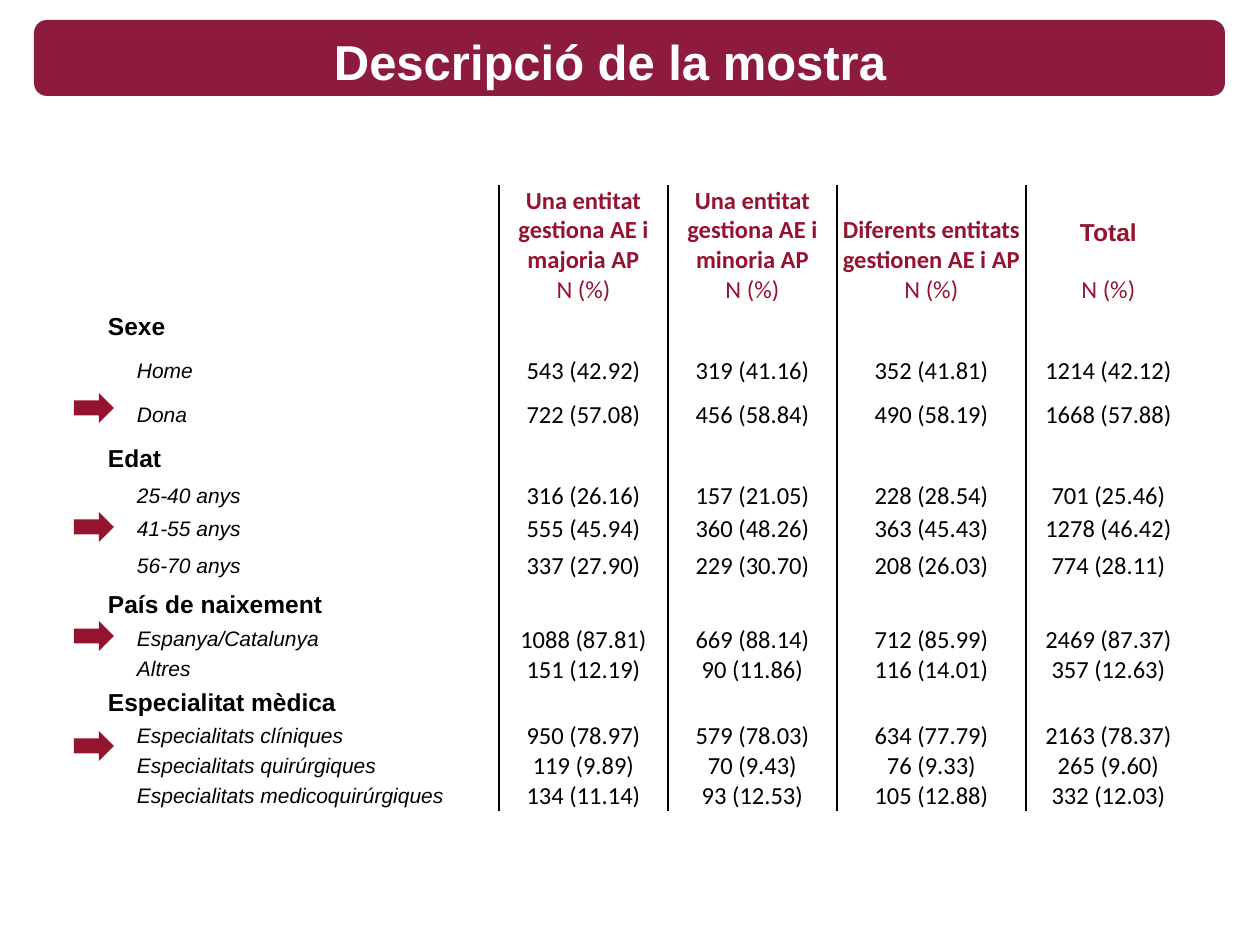
from dataclasses import dataclass

from lxml import etree
from pptx import Presentation
from pptx import util as u
from pptx.dml.color import RGBColor
from pptx.enum import shapes, text
from pptx.oxml.ns import qn


@dataclass(frozen=True)
class Theme:
    banner: str = "8D1B3D"
    accent: str = "94142F"
    ink: str = "000000"
    paper: str = "FFFFFF"
    heading_font: str = "Arial"
    figure_font: str = "Calibri"
    title_size: int = 28
    body_size: int = 14
    item_size: int = 12


def px(length):
    return u.Emu(round(length * 914400 / 126))


class SlideBuilder:
    def __init__(self, slide, theme):
        self.slide = slide
        self.theme = theme

    def add_words(self, paragraph, words, color, align=text.PP_ALIGN.CENTER, **font_format):
        paragraph.alignment = align
        run = paragraph.add_run()
        run.text = words
        run.font.color.rgb = RGBColor.from_string(color)
        for name, value in font_format.items():
            setattr(run.font, name, value)

    def shape(self, kind, box, color):
        item = self.slide.shapes.add_shape(kind, *map(px, box))
        item.shadow.inherit = False
        item.fill.solid()
        item.fill.fore_color.rgb = RGBColor.from_string(color)
        item.line.fill.background()
        return item

    def title(self, words, box):
        frame = self.slide.shapes.add_textbox(*map(px, box)).text_frame
        frame.word_wrap = True
        frame.vertical_anchor = text.MSO_ANCHOR.MIDDLE
        self.add_words(frame.paragraphs[0], words, self.theme.paper, bold=True,
                       name=self.theme.heading_font, size=u.Pt(self.theme.title_size))

    def table(self, origin, widths, heights):
        frame = self.slide.shapes.add_table(
            len(heights), len(widths), *map(px, (*origin, sum(widths), sum(heights))))
        grid = frame.table
        grid.first_row = grid.horz_banding = False
        for column, width in zip(grid.columns, widths):
            column.width = px(width)
        for row, height in zip(grid.rows, heights):
            row.height = px(height)
            for index, cell in enumerate(row.cells):
                self.borders(cell, left=index > 0, right=index < len(widths) - 1)
                cell.fill.background()
                self.place(cell, text.MSO_ANCHOR.MIDDLE)
        return grid

    def borders(self, cell, left, right):
        properties = cell._tc.get_or_add_tcPr()
        sides = {"lnL": left, "lnR": right, "lnT": False, "lnB": False}
        for side, visible in sides.items():
            line = etree.SubElement(properties, qn(f"a:{side}"), w=str(int(u.Pt(1))))
            if visible:
                fill = etree.SubElement(line, qn("a:solidFill"))
                etree.SubElement(fill, qn("a:srgbClr"), val=self.theme.ink)
            else:
                etree.SubElement(line, qn("a:noFill"))

    def place(self, cell, anchor, left=1):
        layout = {"vertical_anchor": anchor, "margin_left": px(left),
                  "margin_right": px(1), "margin_top": 0, "margin_bottom": 0}
        for name, value in layout.items():
            setattr(cell, name, value)

    def header(self, cell, words, font, gap):
        self.place(cell, text.MSO_ANCHOR.BOTTOM)
        frame = cell.text_frame
        size = u.Pt(self.theme.body_size)
        self.add_words(frame.paragraphs[0], words, self.theme.accent,
                       name=font, size=size, bold=True)
        unit = frame.add_paragraph()
        unit.space_before = u.Pt(gap)
        self.add_words(unit, "N (%)", self.theme.accent,
                       name=self.theme.figure_font, size=size, bold=False)

    def label(self, cell, words, is_group):
        self.place(cell, text.MSO_ANCHOR.MIDDLE, left=1 if is_group else 30)
        size = self.theme.body_size if is_group else self.theme.item_size
        self.add_words(cell.text_frame.paragraphs[0], words, self.theme.ink,
                       text.PP_ALIGN.LEFT, name=self.theme.heading_font,
                       size=u.Pt(size), bold=is_group, italic=not is_group)

    def figure(self, cell, words):
        self.add_words(cell.text_frame.paragraphs[0], words, self.theme.ink, bold=False,
                       name=self.theme.figure_font, size=u.Pt(self.theme.body_size))

    def empty(self, cell):
        # Keeps the blank cell from stretching its row
        etree.SubElement(cell.text_frame.paragraphs[0]._p, qn("a:endParaRPr"),
                         sz=str(self.theme.body_size * 100))


THEME = Theme()
HEADERS = [
    ("Una entitat gestiona AE i majoria AP", THEME.figure_font, 0),
    ("Una entitat gestiona AE i minoria AP", THEME.figure_font, 0),
    ("Diferents entitats gestionen AE i AP", THEME.figure_font, 0),
    ("Total", THEME.heading_font, 16),
]
# Row height, label, figures; a group row has no figures
ROWS = [
    (44, "Sexe", []),
    (44, "Home", ["543 (42.92)", "319 (41.16)", "352 (41.81)", "1214 (42.12)"]),
    (44, "Dona", ["722 (57.08)", "456 (58.84)", "490 (58.19)", "1668 (57.88)"]),
    (44, "Edat", []),
    (30, "25-40 anys", ["316 (26.16)", "157 (21.05)", "228 (28.54)", "701 (25.46)"]),
    (37, "41-55 anys", ["555 (45.94)", "360 (48.26)", "363 (45.43)", "1278 (46.42)"]),
    (37, "56-70 anys", ["337 (27.90)", "229 (30.70)", "208 (26.03)", "774 (28.11)"]),
    (40, "País de naixement", []),
    (30, "Espanya/Catalunya",
     ["1088 (87.81)", "669 (88.14)", "712 (85.99)", "2469 (87.37)"]),
    (30, "Altres", ["151 (12.19)", "90 (11.86)", "116 (14.01)", "357 (12.63)"]),
    (37, "Especialitat mèdica", []),
    (30, "Especialitats clíniques",
     ["950 (78.97)", "579 (78.03)", "634 (77.79)", "2163 (78.37)"]),
    (30, "Especialitats quirúrgiques",
     ["119 (9.89)", "70 (9.43)", "76 (9.33)", "265 (9.60)"]),
    (30, "Especialitats medicoquirúrgiques",
     ["134 (11.14)", "93 (12.53)", "105 (12.88)", "332 (12.03)"]),
]


def main():
    deck = Presentation()
    deck.slide_width, deck.slide_height = px(1260), px(945)
    builder = SlideBuilder(deck.slides.add_slide(deck.slide_layouts[6]), THEME)

    # Title banner
    banner = builder.shape(shapes.MSO_SHAPE.ROUNDED_RECTANGLE,
                           (34, 20, 1191, 76), THEME.banner)
    banner.adjustments[0] = 0.17
    builder.title("Descripció de la mostra", (30, 30, 1160, 62))

    # Sample table
    heights = [120] + [height for height, _, _ in ROWS]
    sample = builder.table((107, 185), (392, 169, 169, 189, 165), heights)
    builder.empty(sample.cell(0, 0))
    for column, header in enumerate(HEADERS, 1):
        builder.header(sample.cell(0, column), *header)
    for row, (_, label, figures) in enumerate(ROWS, 1):
        builder.label(sample.cell(row, 0), label, is_group=not figures)
        for column in range(1, len(HEADERS) + 1):
            cell = sample.cell(row, column)
            if figures:
                builder.figure(cell, figures[column - 1])
            else:
                builder.empty(cell)

    # Arrows beside the table rows
    for top in (393, 512, 621, 731):
        builder.shape(shapes.MSO_SHAPE.RIGHT_ARROW, (74, top, 40, 30), THEME.accent)

    deck.save("out.pptx")


if __name__ == "__main__":
    main()
